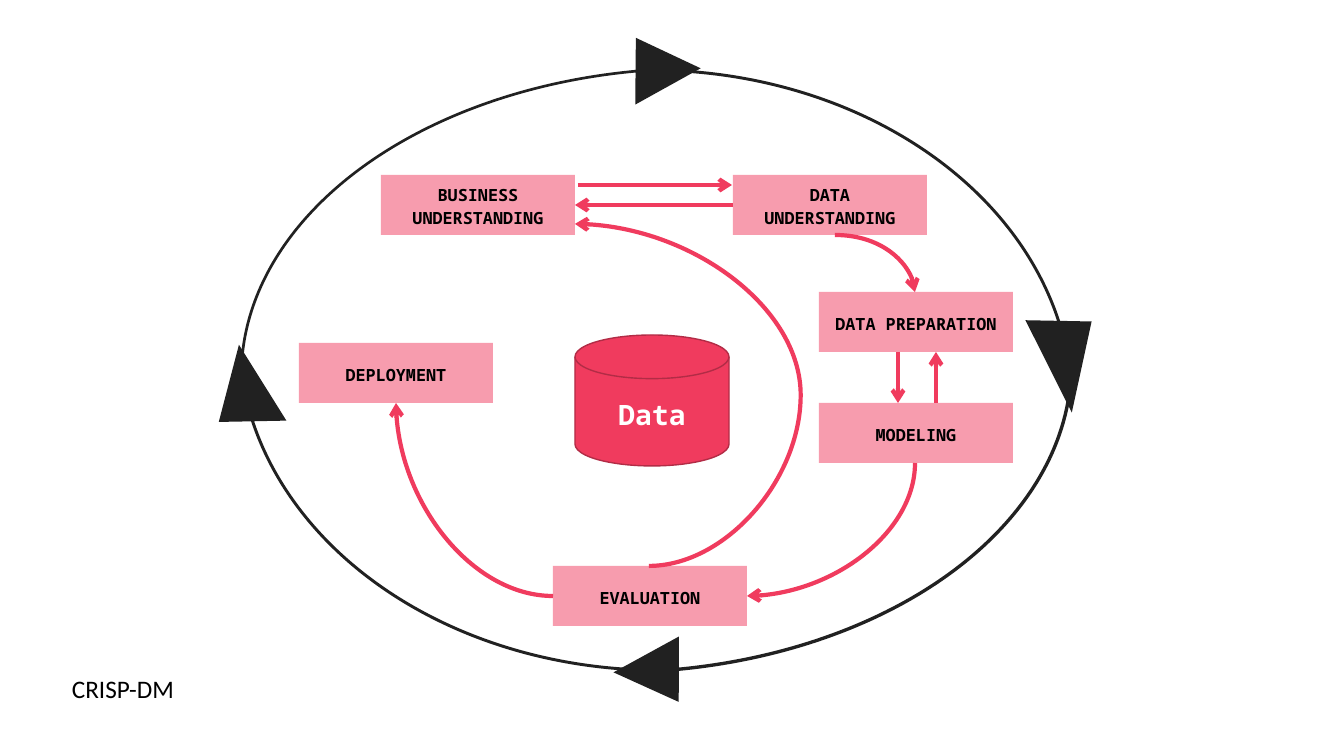
from dataclasses import dataclass
from typing import Any

from lxml import etree
from pptx import Presentation
from pptx import util as u
from pptx.dml.color import RGBColor
from pptx.enum import shapes, text
from pptx.oxml import ns

PX = 914400 / 100.8
ROSE = RGBColor(0xF0, 0x3B, 0x5E)
WINE = RGBColor(0xB2, 0x2C, 0x46)
CHARCOAL = RGBColor(0x21, 0x21, 0x21)
BLACK = RGBColor(0, 0, 0)
WHITE = RGBColor(0xFF, 0xFF, 0xFF)
RIGHT, LEFT = 3, 1


def px(*lengths):
    return [u.Emu(round(length * PX)) for length in lengths]


def write(frame, words, size=12, font="Noto Sans Mono", color=BLACK, bold=True,
          align=text.PP_ALIGN.CENTER, spacing=1.15, after=10):
    paragraph = frame.paragraphs[0]
    paragraph.alignment = align
    paragraph.line_spacing = spacing
    paragraph.space_after = u.Pt(after)
    run = paragraph.add_run()
    run.text = words
    run.font.size = u.Pt(size)
    run.font.name = font
    run.font.bold = bold
    run.font.color.rgb = color


@dataclass
class Diagram:
    slide: Any
    accent: RGBColor = ROSE
    arrow_width: int = 3
    stage_size: tuple = (194, 60)

    def shape(self, kind, box, fill, outline=None):
        shape = self.slide.shapes.add_shape(kind, *px(*box))
        shape.shadow.inherit = False
        shape.fill.solid()
        shape.fill.fore_color.rgb = fill
        if outline is None:
            shape.line.fill.background()
        else:
            shape.line.color.rgb = outline
            shape.line.width = u.Pt(1)
        shape.text_frame.word_wrap = True
        shape.text_frame.vertical_anchor = text.MSO_ANCHOR.MIDDLE
        return shape

    def stage(self, words, left, top):
        stage = self.shape(shapes.MSO_SHAPE.RECTANGLE, (left, top, *self.stage_size), self.accent)
        tint = stage._element.spPr.find(ns.qn("a:solidFill"))[0]
        etree.SubElement(tint, ns.qn("a:alpha"), val="50000")
        write(stage.text_frame, words)
        return stage

    def store(self, words, box):
        store = self.shape(shapes.MSO_SHAPE.FLOWCHART_MAGNETIC_DISK, box, self.accent, WINE)
        write(store.text_frame, words, size=20, color=WHITE)

    def arrow(self, start, end, kind=shapes.MSO_CONNECTOR.STRAIGHT):
        arrow = self.slide.shapes.add_connector(kind, *px(*start, *end))
        arrow.line.color.rgb = self.accent
        arrow.line.width = u.Pt(self.arrow_width)
        properties = arrow._element.spPr
        etree.SubElement(properties.find(ns.qn("a:ln")), ns.qn("a:tailEnd"), type="arrow")
        etree.SubElement(properties, ns.qn("a:effectLst"))
        return arrow

    def curve(self, start, end, quarter_turns=0, bend=None):
        middle_x, middle_y = (start[0] + end[0]) / 2, (start[1] + end[1]) / 2
        x, y = start[0] - middle_x, start[1] - middle_y
        for _ in range(quarter_turns):
            x, y = y, -x
        curve = self.arrow((middle_x + x, middle_y + y), (middle_x - x, middle_y - y),
                           shapes.MSO_CONNECTOR.CURVE)
        properties = curve._element.spPr
        if quarter_turns:
            properties.find(ns.qn("a:xfrm")).set("rot", str(quarter_turns * 90 * 60000))
        geometry = properties.find(ns.qn("a:prstGeom"))
        if bend is None:
            geometry.set("prst", "curvedConnector2")
        else:
            guides = geometry.find(ns.qn("a:avLst"))
            etree.SubElement(guides, ns.qn("a:gd"), name="adj1", fmla=f"val {round(bend * 100000)}")

    def cycle_arrow(self, box, rotation, adjustments):
        arrow = self.shape(shapes.MSO_SHAPE.CIRCULAR_ARROW, box, CHARCOAL)
        arrow.rotation = rotation
        for index, value in enumerate(adjustments):
            arrow.adjustments[index] = value

    def caption(self, words, box):
        caption = self.slide.shapes.add_textbox(*px(*box))
        caption.text_frame.word_wrap = True
        write(caption.text_frame, words, size=18, font="Calibri", bold=False,
              align=text.PP_ALIGN.LEFT, spacing=1.0, after=0)


def main():
    deck = Presentation()
    deck.slide_width, deck.slide_height = px(1344, 756)
    diagram = Diagram(deck.slides.add_slide(deck.slide_layouts[6]))

    diagram.store("Data", (575, 335, 154, 131))
    business = diagram.stage("BUSINESS UNDERSTANDING", 381, 175)
    understanding = diagram.stage("DATA UNDERSTANDING", 733, 175)
    for words, left, top in (
        ("DATA PREPARATION", 819, 292),
        ("MODELING", 819, 403),
        ("EVALUATION", 553, 566),
        ("DEPLOYMENT", 299, 343),
    ):
        diagram.stage(words, left, top)

    diagram.arrow((578, 185), (732, 185))
    back_to_business = diagram.arrow((733, 205), (575, 205))
    back_to_business.begin_connect(understanding, LEFT)
    back_to_business.end_connect(business, RIGHT)
    diagram.curve((835, 235), (915, 292))
    diagram.arrow((898, 352), (898, 403))
    diagram.arrow((936, 403), (936, 352))
    diagram.curve((915, 463), (747, 596), quarter_turns=1)
    diagram.curve((553, 596), (396, 403), quarter_turns=2)
    diagram.curve((649, 566), (575, 224), bend=-2.05)

    wide, tall = (980, 681), (735, 909)
    for corner, size, rotation, line, head, sweep, tip in (
        ((208, 35), wide, 0, 0.004, 7.26, 155.05, 0.049),
        ((124, 24), wide, 180, 0.005, 7.26, 154.8, 0.048),
        ((283, -50), tall, 90, 0.004, 7.61, 155.05, 0.045),
        ((292, -118), tall, 270, 0.004, 6.39, 154.94, 0.046),
    ):
        diagram.cycle_arrow((*corner, *size), rotation, (line, head, sweep, 108, tip))

    diagram.caption("CRISP-DM", (62, 668, 142, 40))
    deck.save("out.pptx")


if __name__ == "__main__":
    main()
